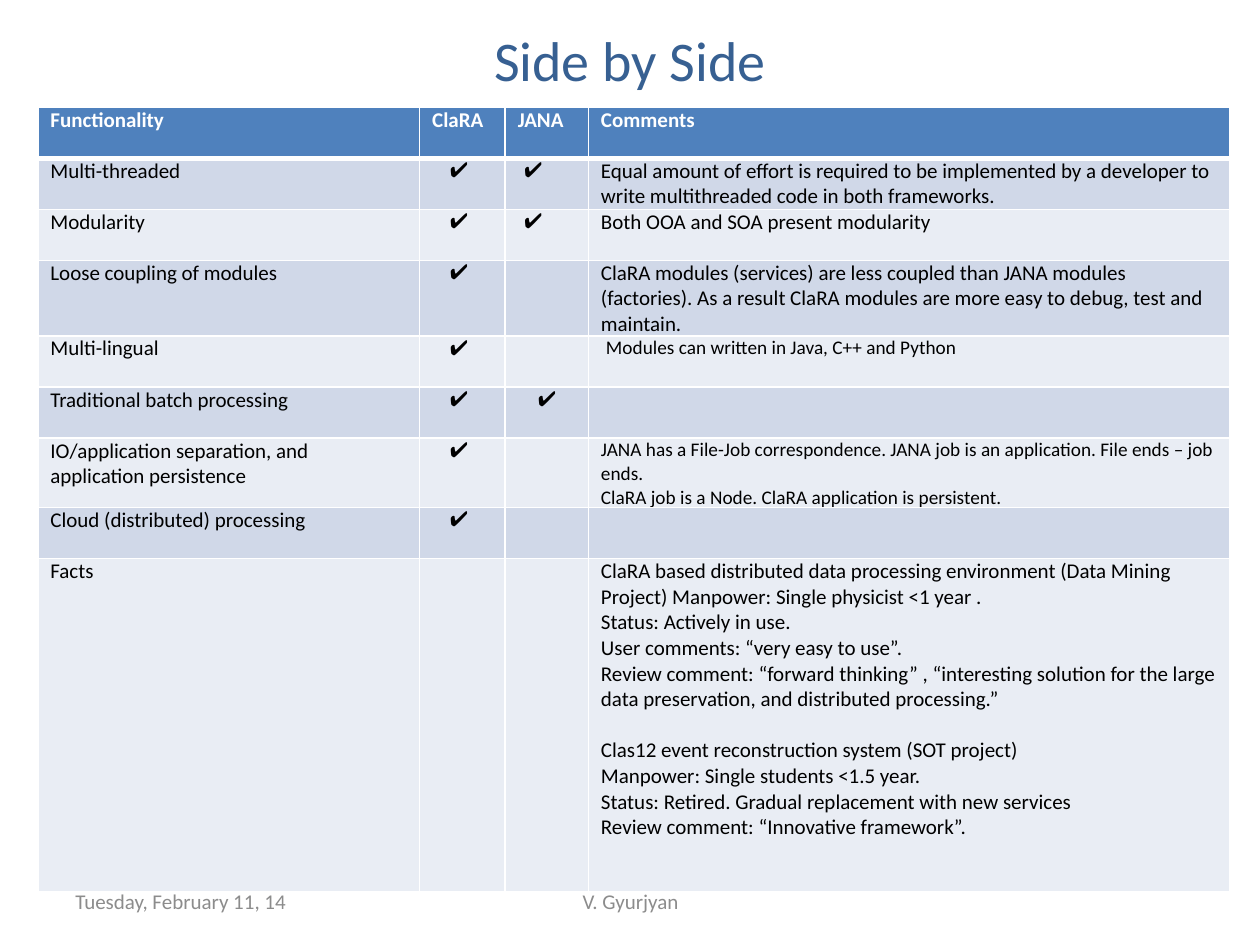
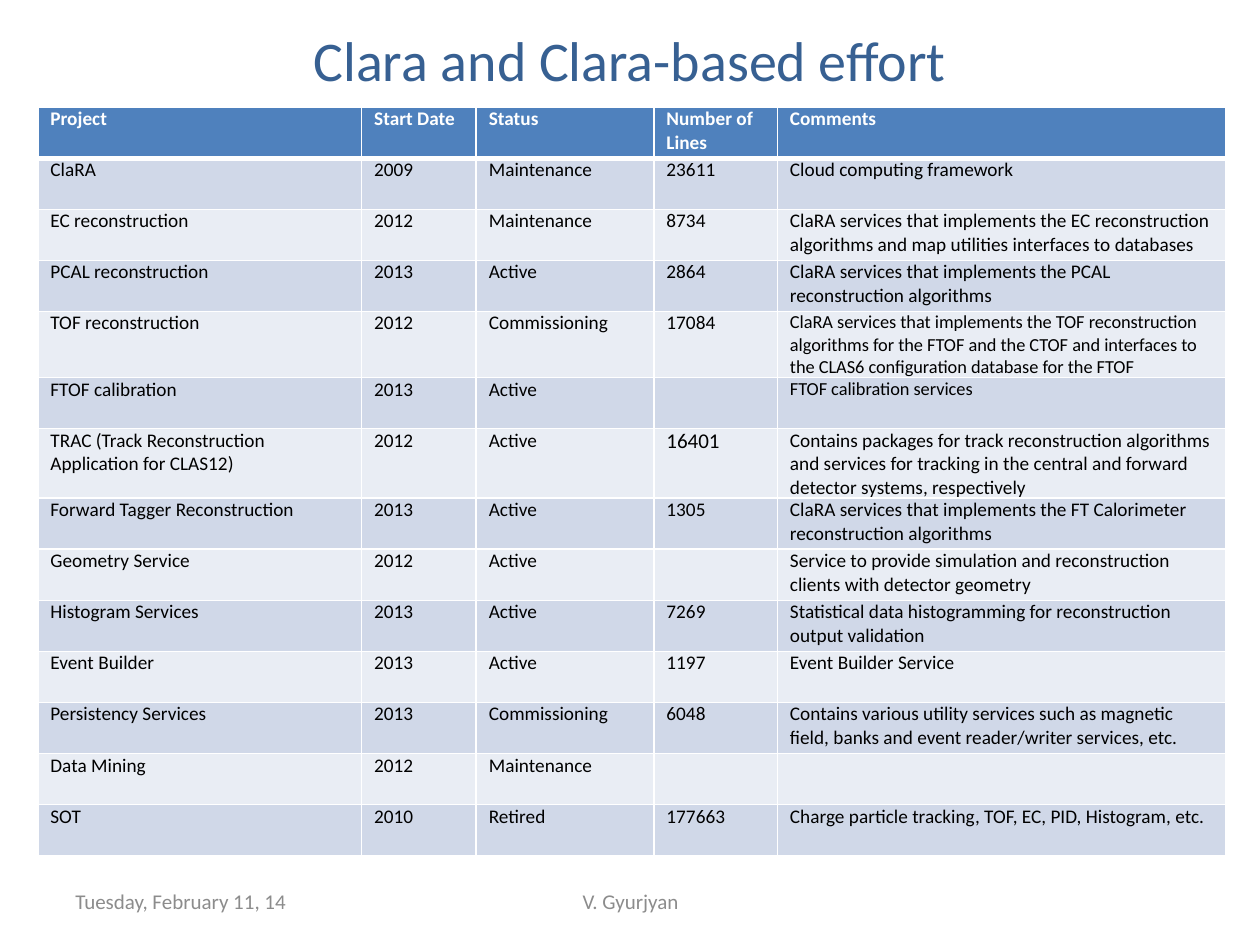
import dataclasses

import pptx
import pptx.dml.color
import pptx.enum.text
import pptx.oxml
import pptx.oxml.ns
import pptx.util

Inches = pptx.util.Inches
Pt = pptx.util.Pt
ALIGN = pptx.enum.text.PP_ALIGN

# Shared look
COLORS = {
    "title": "376092",
    "header": "4F81BD",
    "band_dark": "D0D8E8",
    "band_light": "E9EDF4",
    "white": "FFFFFF",
    "text": "000000",
    "footer": "8C8C8C",
}
FONT = "Calibri"
SYMBOL_FONT = "Arial"
ROW_HEIGHT = Pt(29.2)
CELL_MARGIN = 0.1
THIN, THICK = 1, 3


@dataclasses.dataclass
class Entry:
    """Cell text that differs from the table's usual size, font or indent."""
    text: str
    size: float = None
    font: str = FONT
    indent: float = 0
    gap_before: int = None  # paragraph that starts a new group


def check(indent):
    return Entry("✔", font=SYMBOL_FONT, indent=indent)


CLARA_CHECK = check(0.14)
JANA_CHECK = check(0.05)
JANA_BATCH_CHECK = check(0.16)

FACTS = Entry("\n".join([
    "ClaRA based distributed data processing environment (Data Mining Project) "
    "Manpower: Single physicist <1 year .",
    "Status: Actively in use.",
    "User comments: “very easy to use”.",
    "Review comment: “forward thinking” , “interesting solution for the large "
    "data preservation, and distributed processing.”",
    "Clas12 event reconstruction system (SOT project)",
    "Manpower: Single students <1.5 year.",
    "Status: Retired. Gradual replacement with new services",
    "Review comment: “Innovative framework”.",
]), gap_before=4)

COMPARISON = [
    ["Functionality", "ClaRA", "JANA", "Comments"],
    ["Multi-threaded", CLARA_CHECK, JANA_CHECK,
     "Equal amount of effort is required to be implemented by a developer to "
     "write multithreaded code in both frameworks."],
    ["Modularity", CLARA_CHECK, JANA_CHECK, "Both OOA and SOA present modularity"],
    ["Loose coupling of modules", CLARA_CHECK, "",
     "ClaRA modules (services) are less coupled than JANA modules (factories). "
     "As a result ClaRA modules are more easy to debug, test and maintain."],
    ["Multi-lingual", CLARA_CHECK, "",
     Entry("Modules can written in Java, C++ and Python", size=11, indent=0.04)],
    ["Traditional batch processing", CLARA_CHECK, JANA_BATCH_CHECK, ""],
    ["IO/application separation, and application persistence", CLARA_CHECK, "",
     Entry("JANA has a File-Job correspondence. JANA job is an application. "
           "File ends – job ends.\n"
           "ClaRA job is a Node. ClaRA application is persistent.", size=11)],
    ["Cloud (distributed) processing", CLARA_CHECK, "", ""],
    ["Facts", "", "", FACTS],
]

PROJECTS = [
    ["Project", "Start Date", "Status", "Number of Lines", "Comments"],
    ["ClaRA", "2009", "Maintenance", "23611", "Cloud computing framework"],
    ["EC reconstruction", "2012", "Maintenance", "8734",
     "ClaRA services that implements the EC reconstruction algorithms and map "
     "utilities interfaces to databases"],
    ["PCAL reconstruction", "2013", "Active", "2864",
     "ClaRA services that implements the PCAL reconstruction algorithms"],
    ["TOF reconstruction", "2012", "Commissioning", "17084",
     Entry("ClaRA services that implements the TOF reconstruction algorithms for "
           "the FTOF and the CTOF and interfaces to the CLAS6 configuration "
           "database for the FTOF", size=10.5)],
    ["FTOF calibration", "2013", "Active", "",
     Entry("FTOF calibration services", size=10.5)],
    ["TRAC (Track Reconstruction Application for CLAS12)", "2012", "Active",
     Entry("16401", size=12),
     "Contains packages for track reconstruction algorithms and services for "
     "tracking in the central and forward detector systems, respectively"],
    ["Forward Tagger Reconstruction", "2013", "Active", "1305",
     "ClaRA services that implements the FT Calorimeter reconstruction algorithms"],
    ["Geometry Service", "2012", "Active", "",
     "Service to provide simulation and reconstruction clients with detector geometry"],
    ["Histogram Services", "2013", "Active", "7269",
     "Statistical data histogramming for reconstruction output validation"],
    ["Event Builder", "2013", "Active", "1197", "Event Builder Service"],
    ["Persistency Services", "2013", "Commissioning", "6048",
     "Contains various utility services such as magnetic field, banks and event "
     "reader/writer services, etc."],
    ["Data Mining", "2012", "Maintenance", "", ""],
    ["SOT", "2010", "Retired", "177663",
     "Charge particle tracking, TOF, EC, PID, Histogram, etc."],
]


def rgb(name):
    return pptx.dml.color.RGBColor.from_string(COLORS[name])


def add_span(para, text, size, color, font=FONT, bold=False):
    span = para.add_run()
    span.text = text
    span.font.size = Pt(size)
    span.font.name = font
    span.font.bold = bold
    span.font.color.rgb = rgb(color)


def add_text(page, bounds, text, size, color, align=ALIGN.LEFT):
    box = page.shapes.add_textbox(*(Inches(length) for length in bounds))
    frame = box.text_frame
    frame.word_wrap = True
    frame.vertical_anchor = pptx.enum.text.MSO_ANCHOR.MIDDLE
    para = frame.paragraphs[0]
    para.alignment = align
    add_span(para, text, size, color)


def set_borders(cell, top, bottom):
    """Draw white cell borders; the lines must precede the fill in the XML."""
    properties = cell._tc.get_or_add_tcPr()
    widths = {"lnL": THIN, "lnR": THIN, "lnT": top, "lnB": bottom}
    for position, (side, width) in enumerate(widths.items()):
        line = pptx.oxml.parse_xml(
            f'<a:{side} {pptx.oxml.ns.nsdecls("a")} w="{Pt(width)}"><a:solidFill>'
            f'<a:srgbClr val="{COLORS["white"]}"/></a:solidFill></a:{side}>')
        properties.insert(position, line)


def fill_cell(cell, entry, row, size):
    if isinstance(entry, str):
        entry = Entry(entry)
    header = row == 0
    size = entry.size or size

    # Cell format
    cell.margin_left = Inches(CELL_MARGIN + entry.indent)
    cell.margin_right = Inches(CELL_MARGIN)
    cell.margin_top = cell.margin_bottom = 0
    cell.fill.solid()
    band = "band_dark" if row % 2 else "band_light"
    cell.fill.fore_color.rgb = rgb("header" if header else band)
    set_borders(cell, THICK if row == 1 else THIN, THICK if header else THIN)

    # Cell text
    if not entry.text:
        return
    for index, line in enumerate(entry.text.split("\n")):
        frame = cell.text_frame
        para = frame.add_paragraph() if index else frame.paragraphs[0]
        if index == entry.gap_before:
            para.space_before = Pt(size * 1.22)
        add_span(para, line, size, "white" if header else "text", entry.font, header)


def add_grid(page, rows, column_widths, size):
    frame = page.shapes.add_table(
        len(rows), len(column_widths), Inches(0.3), Inches(0.85),
        Inches(sum(column_widths)), ROW_HEIGHT * len(rows))
    table = frame.table
    table.horz_banding = False
    for column, width in zip(table.columns, column_widths):
        column.width = Inches(width)
    for row, entries in enumerate(rows):
        table.rows[row].height = ROW_HEIGHT
        for column, entry in enumerate(entries):
            fill_cell(table.cell(row, column), entry, row, size)
    return table


def add_page(deck, title):
    page = deck.slides.add_slide(deck.slide_layouts[6])
    add_text(page, (0, 0.12, 10, 0.7), title, 32, "title", ALIGN.CENTER)
    return page


def add_footer(page):
    add_text(page, (0.5, 6.95, 2.33, 0.4), "Tuesday, February 11, 14", 12, "footer")
    add_text(page, (3.42, 6.95, 3.17, 0.4), "V. Gyurjyan", 12, "footer", ALIGN.CENTER)


def main():
    deck = pptx.Presentation()
    deck.slide_width, deck.slide_height = Inches(10), Inches(7.5)

    # Framework comparison
    page = add_page(deck, "Side by Side")
    table = add_grid(page, COMPARISON, [3.03, 0.68, 0.66, 5.09], 12)
    table.rows[len(COMPARISON) - 1].height = Inches(2.64)
    add_footer(page)

    # Project overview
    page = add_page(deck, "Clara and Clara-based effort")
    add_grid(page, PROJECTS, [2.57, 0.91, 1.41, 0.98, 3.56], 11)
    add_footer(page)

    deck.save("out.pptx")


if __name__ == "__main__":
    main()
